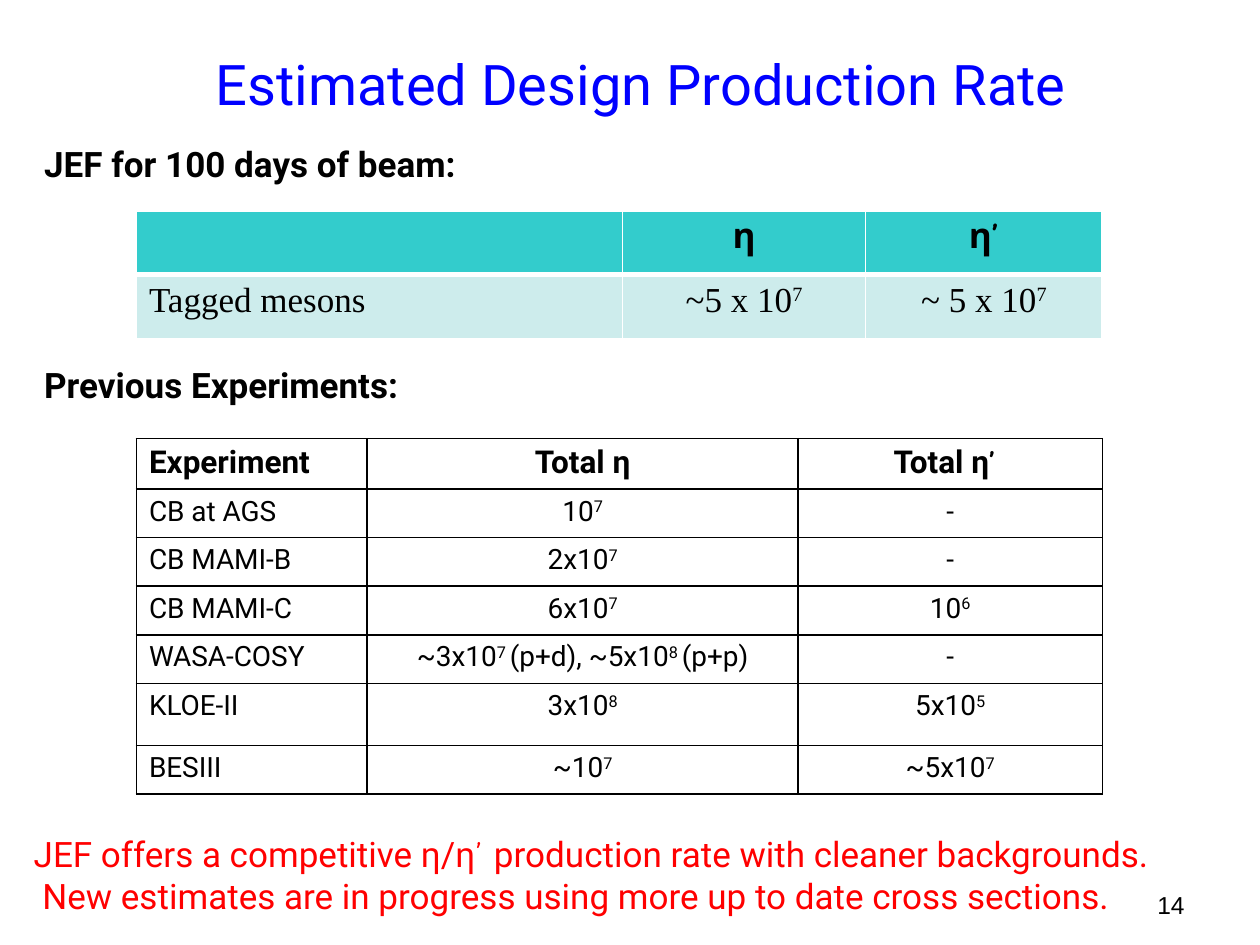
from dataclasses import dataclass

from lxml.etree import SubElement
from pptx import Presentation
from pptx.dml.color import RGBColor
from pptx.enum.text import MSO_ANCHOR as Anchor, PP_ALIGN as Align
from pptx.oxml.ns import qn
from pptx.util import Cm, Pt

BLACK = RGBColor(0x00, 0x00, 0x00)
WHITE = RGBColor(0xFF, 0xFF, 0xFF)
BLUE = RGBColor(0x00, 0x00, 0xFF)
RED = RGBColor(0xFF, 0x00, 0x00)
TEAL = RGBColor(0x33, 0xCC, 0xCC)
PALE_TEAL = RGBColor(0xCD, 0xEC, 0xEC)

SANS, SERIF, PRIME_FONT = "Roboto", "Times New Roman", "Comic Neue"
PRIME = "’"


@dataclass
class Box:
    """A place on the slide, in centimetres."""
    left: float
    top: float
    width: float
    height: float


@dataclass
class RowStyle:
    size: int
    font: str
    bold: bool = False
    fill: RGBColor | None = None


@dataclass
class Borders:
    color: RGBColor
    width: float = 1
    header_rule: float = 1


@dataclass
class TableSpec:
    left: float
    top: float
    columns: list[float]
    row_heights: list[float]
    rows: list[list[str]]
    header: RowStyle
    body: RowStyle
    borders: Borders


def write_text(frame, text: str, *, size: int, font: str = SANS, color: RGBColor = BLACK,
               bold: bool = False, align: Align = Align.LEFT) -> None:
    """Write one paragraph per line; parts between bars are superscripts or primes."""
    for index, line in enumerate(text.split("\n")):
        paragraph = frame.paragraphs[0] if index == 0 else frame.add_paragraph()
        paragraph.alignment = align
        for position, part in enumerate(line.split("|")):
            if not part:
                continue
            run = paragraph.add_run()
            run.text = part
            run.font.size = Pt(size)
            run.font.bold = bold
            run.font.color.rgb = color
            marked = position % 2 == 1
            run.font.name = PRIME_FONT if marked and PRIME in part else font
            if marked and PRIME not in part:
                run.font._element.set("baseline", "30000")


def add_text(slide, box: Box, text: str, *, anchor: Anchor = Anchor.TOP,
             margin_top: float = 0.13, margin_right: float = 0.25, **text_format) -> None:
    shape = slide.shapes.add_textbox(Cm(box.left), Cm(box.top), Cm(box.width), Cm(box.height))
    frame = shape.text_frame
    frame.word_wrap = True
    frame.vertical_anchor = anchor
    frame.margin_top = Cm(margin_top)
    frame.margin_right = Cm(margin_right)
    write_text(frame, text, **text_format)


def set_borders(cell, color: RGBColor, widths: dict[str, float]) -> None:
    """Draw the cell's sides; the lines must stand before the fill in the XML."""
    properties = cell._tc.get_or_add_tcPr()
    for index, (side, width) in enumerate(widths.items()):
        line = SubElement(properties, qn(f"a:ln{side}"), w=str(Pt(width)))
        fill = SubElement(line, qn("a:solidFill"))
        SubElement(fill, qn("a:srgbClr"), val=str(color))
        properties.insert(index, line)


def add_table(slide, spec: TableSpec) -> None:
    frame = slide.shapes.add_table(
        len(spec.rows), len(spec.columns), Cm(spec.left), Cm(spec.top),
        Cm(sum(spec.columns)), Cm(sum(spec.row_heights)))
    table = frame.table
    table.horz_banding = False
    table.first_row = False
    for column, width in zip(table.columns, spec.columns):
        column.width = Cm(width)
    for row, height in zip(table.rows, spec.row_heights):
        row.height = Cm(height)

    borders = spec.borders
    for row_index, texts in enumerate(spec.rows):
        style = spec.header if row_index == 0 else spec.body
        widths = dict.fromkeys("LRTB", borders.width)
        if row_index == 0:
            widths["B"] = borders.header_rule
        elif row_index == 1:
            widths["T"] = borders.header_rule
        for column_index, text in enumerate(texts):
            cell = table.cell(row_index, column_index)
            if style.fill is None:
                cell.fill.background()
            else:
                cell.fill.solid()
                cell.fill.fore_color.rgb = style.fill
            set_borders(cell, borders.color, widths)
            write_text(cell.text_frame, text, size=style.size, font=style.font,
                       bold=style.bold, align=Align.CENTER if column_index else Align.LEFT)


DESIGN_RATE = TableSpec(
    left=2.75, top=4.25, columns=[9.8, 4.9, 4.77], row_heights=[1.29, 1.29],
    rows=[["", "η", "η’"],
          ["Tagged mesons", "~5 x 10|7", "~ 5 x 10|7"]],
    header=RowStyle(20, PRIME_FONT, bold=True, fill=TEAL),
    body=RowStyle(20, SERIF, fill=PALE_TEAL),
    borders=Borders(WHITE, header_rule=3))

PREVIOUS_EXPERIMENTS = TableSpec(
    left=2.75, top=8.84, columns=[4.65, 8.69, 6.13],
    row_heights=[1.01, 0.98, 0.98, 0.98, 0.98, 1.25, 0.98],
    rows=[["Experiment", "Total η", "Total η|’ "],
          ["CB at AGS", "10|7", "-"],
          ["CB MAMI-B", "2x10|7", "-"],
          ["CB MAMI-C", "6x10|7", "10|6"],
          ["WASA-COSY", "~3x10|7 |(p+d), ~5x10|8 |(p+p)", "-"],
          ["KLOE-II", "3x10|8", "5x10|5"],
          ["BESIII", "~10|7", "~5x10|7"]],
    header=RowStyle(18, SANS, bold=True),
    body=RowStyle(16, SANS),
    borders=Borders(BLACK))

HEADINGS = [("JEF for 100 days of beam:", 2.74), ("Previous Experiments:", 7.2)]

CONCLUSION = ("JEF offers a competitive η/η|’ |production rate with cleaner backgrounds.\n"
              " New estimates are in progress using more up to date cross sections.")


def main() -> None:
    presentation = Presentation()
    presentation.slide_width = Cm(25.4)
    presentation.slide_height = Cm(19.05)
    slide = presentation.slides.add_slide(presentation.slide_layouts[6])

    add_text(slide, Box(1.27, 0, 24.13, 2.74), "Estimated Design Production Rate",
             size=32, color=BLUE, align=Align.CENTER, anchor=Anchor.MIDDLE,
             margin_top=0.73, margin_right=1.07)
    add_text(slide, Box(18.21, 17.35, 5.92, 1.32), "14",
             size=14, font="Arial", align=Align.RIGHT, anchor=Anchor.BOTTOM)
    for heading, top in HEADINGS:
        add_text(slide, Box(0.64, top, 10.36, 1.12), heading, size=20, bold=True)
    add_table(slide, DESIGN_RATE)
    add_table(slide, PREVIOUS_EXPERIMENTS)
    add_text(slide, Box(0.43, 16.66, 24.97, 2.2), CONCLUSION, size=20, color=RED)

    presentation.save("out.pptx")


if __name__ == "__main__":
    main()
